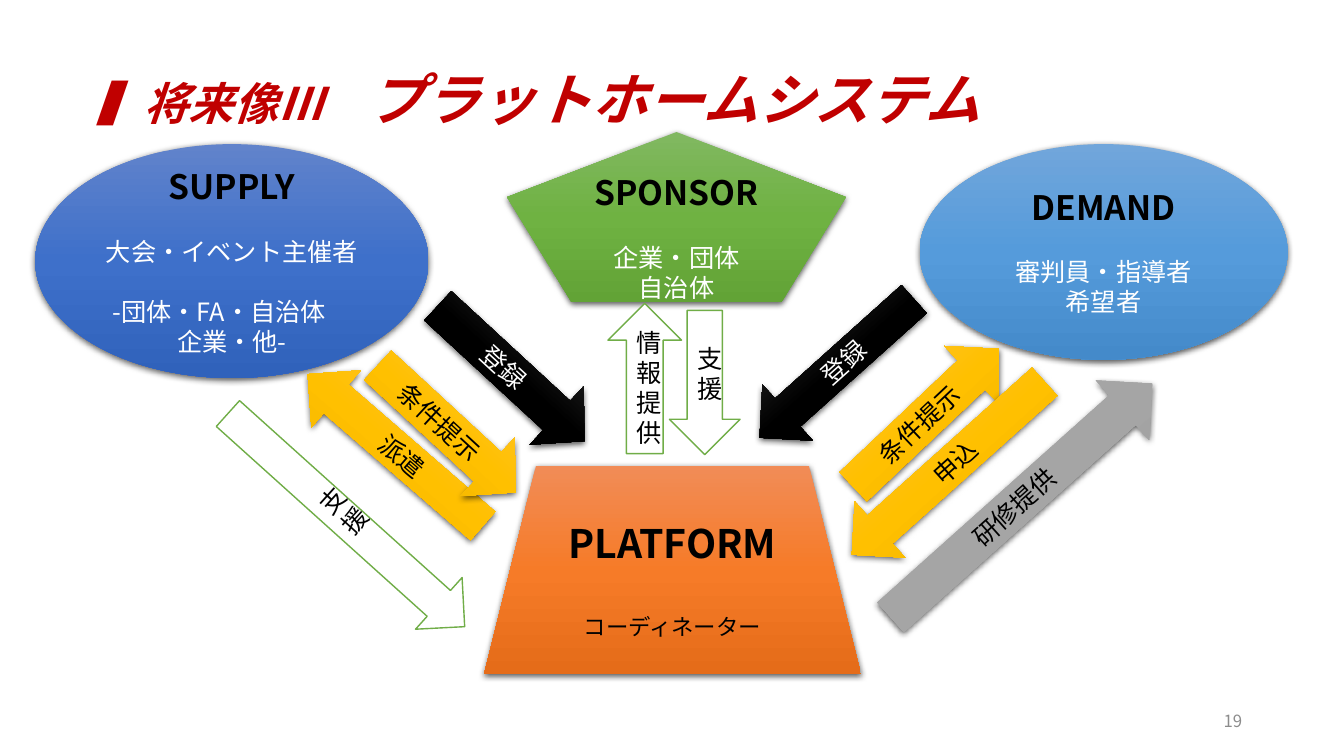
from copy import deepcopy

from lxml.etree import SubElement
from pptx import Presentation
from pptx.dml.color import RGBColor
from pptx.enum.shapes import MSO_SHAPE
from pptx.enum.text import MSO_ANCHOR, MSO_AUTO_SIZE, PP_ALIGN
from pptx.oxml.ns import qn
from pptx.util import Inches, Pt

FONT = "Noto Sans CJK JP"
LINE_HEIGHT = 1.19

COLORS = {
    "title": "C00000",
    "number": "8C8C8C",
    "black": "000000",
    "white": "FFFFFF",
    "outline": "70AD47",
}
GRADIENTS = {
    "orange": ("F18C57", "F67B28", "E56C19"),
    "blue": ("6183CB", "3E70CA", "3062BB"),
    "sky": ("71A6DB", "559BDB", "448ACA"),
    "green": ("81B861", "6FB242", "62A336"),
    "black": ("4B4B4B", "000000", "000000"),
    "gray": ("AFAFAF", "A5A5A5", "939393"),
    "gold": ("FFC64B", "FFC000", "E3AB00"),
}

# kind, box, gradient, heading, heading size, blank size, detail size, detail color, detail groups
ACTORS = [
    (MSO_SHAPE.TRAPEZOID, (4.8, 4.62, 3.74, 2.07), "orange",
     "PLATFORM", 28, 28, 16, "black", [["コーディネーター"]]),
    (MSO_SHAPE.OVAL, (0.35, 1.43, 3.9, 2.32), "blue",
     "SUPPLY", 24, 18, 18, "white",
     [["大会・イベント主催者"], ["-団体・FA・自治体　企業・他-"]]),
    (MSO_SHAPE.OVAL, (9.12, 1.43, 3.65, 2.14), "sky",
     "DEMAND", 24, 18, 18, "white", [["審判員・指導者", "希望者"]]),
    (MSO_SHAPE.REGULAR_PENTAGON, (5.03, 1.31, 3.36, 1.69), "green",
     "SPONSOR", 24, 18, 18, "white", [["企業・団体", "自治体"]]),
]

# kind, box, rotation, head length, gradient (None for outlined), label
ARROWS = [
    (MSO_SHAPE.RIGHT_ARROW, (4.08, 3.31, 1.98, 0.79), 42.7, 0.475, "black", "登録"),
    (MSO_SHAPE.RIGHT_ARROW, (8.39, 4.57, 3.48, 0.79), 318.2, 0.5, "gray", "研修提供"),
    (MSO_SHAPE.RIGHT_ARROW, (8.19, 3.75, 1.99, 0.79), 316.6, 0.475, "gold", "条件提示"),
    (MSO_SHAPE.LEFT_ARROW, (2.77, 4.09, 2.3, 0.75), 40.9, 0.5, "gold", "派遣"),
    (MSO_SHAPE.LEFT_ARROW, (7.27, 3.28, 2.06, 0.75), 318.1, 0.5, "black", "登録"),
    (MSO_SHAPE.RIGHT_ARROW, (3.5, 3.86, 1.86, 0.79), 42.7, 0.475, "gold", "条件提示"),
    (MSO_SHAPE.LEFT_ARROW, (8.12, 4.27, 2.57, 0.75), 318.1, 0.5, "gold", "申込"),
    (MSO_SHAPE.UP_ARROW, (6.03, 3.01, 0.73, 1.49), 0, 0.5, None, "情報提供"),
    (MSO_SHAPE.DOWN_ARROW, (6.64, 3.08, 0.7, 1.43), 0, 0.5, None, "支援"),
    (MSO_SHAPE.DOWN_ARROW, (3.09, 3.58, 0.69, 3.16), 312, 0.5, None, "支援"),
]


def rgb(name):
    return RGBColor.from_string(COLORS[name])


def set_attributes(target, values):
    for name, value in values.items():
        setattr(target, name, value)


def add_run(paragraph, text, size, color, bold=False, italic=False):
    run = paragraph.add_run()
    run.text = text
    set_attributes(run.font, {"size": Pt(size), "bold": bold, "italic": italic, "name": FONT})
    run.font.color.rgb = rgb(color)
    SubElement(run.font._element, qn("a:ea"), typeface=FONT)


def format_paragraph(paragraph, size, align=PP_ALIGN.CENTER, gap=0):
    set_attributes(paragraph, {
        "alignment": align,
        "line_spacing": Pt(size * LINE_HEIGHT),
        "space_before": Pt(gap),
    })


def fill_gradient(shape, gradient):
    """Fill from top to bottom with three evenly placed stops."""
    shape.fill.gradient()
    shape.fill.gradient_angle = 270
    stops = shape._element.spPr.find(".//" + qn("a:gsLst"))
    stops.append(deepcopy(stops[0]))
    for index, stop in enumerate(shape.fill.gradient_stops):
        stop.position = index / 2
        stop.color.rgb = RGBColor.from_string(GRADIENTS[gradient][index])


def add_soft_shadow(shape):
    effects = shape._element.spPr.find(qn("a:effectLst"))
    shadow = SubElement(effects, qn("a:outerShdw"), blurRad=str(Pt(4.5)),
                        dist=str(Pt(1.5)), dir="5400000", algn="ctr", rotWithShape="0")
    color = SubElement(shadow, qn("a:srgbClr"), val=COLORS["black"])
    SubElement(color, qn("a:alpha"), val="63000")


def add_block(slide, kind, box, gradient):
    """Add a shaded shape, or a white outlined one when gradient is None."""
    block = slide.shapes.add_shape(kind, *map(Inches, box))
    block.shadow.inherit = False
    if gradient:
        fill_gradient(block, gradient)
        block.line.fill.background()
        add_soft_shadow(block)
    else:
        block.fill.solid()
        block.fill.fore_color.rgb = rgb("white")
        block.line.color.rgb = rgb("outline")
        block.line.width = Pt(1)
    set_attributes(block.text_frame, {"word_wrap": True, "vertical_anchor": MSO_ANCHOR.MIDDLE})
    return block


def add_actor(slide, kind, box, gradient, heading, heading_size,
              blank_size, detail_size, detail_color, groups):
    frame = add_block(slide, kind, box, gradient).text_frame
    format_paragraph(frame.paragraphs[0], heading_size)
    add_run(frame.paragraphs[0], heading, heading_size, "black", bold=True)
    for group in groups:
        for index, detail in enumerate(group):
            paragraph = frame.add_paragraph()
            gap = 0 if index else blank_size * LINE_HEIGHT
            format_paragraph(paragraph, detail_size, gap=gap)
            add_run(paragraph, detail, detail_size, detail_color)


def add_arrow(slide, kind, box, rotation, head_length, gradient, label):
    arrow = add_block(slide, kind, box, gradient)
    arrow.rotation = rotation
    arrow.adjustments[1] = head_length
    paragraph = arrow.text_frame.paragraphs[0]
    format_paragraph(paragraph, 18)
    add_run(paragraph, label, 18, "white" if gradient == "black" else "black")


def add_title(slide):
    title = slide.shapes.title
    set_attributes(title, {"left": Inches(0.88), "top": Inches(0.6),
                           "width": Inches(9.07), "height": Inches(0.77)})
    set_attributes(title.text_frame, {
        "word_wrap": False,
        "auto_size": MSO_AUTO_SIZE.SHAPE_TO_FIT_TEXT,
        "vertical_anchor": MSO_ANCHOR.TOP,
    })
    paragraph = title.text_frame.paragraphs[0]
    format_paragraph(paragraph, 40, PP_ALIGN.LEFT)
    for text, size in (("▍将来像Ⅲ　", 32), ("プラットホームシステム", 40)):
        add_run(paragraph, text, size, "title", bold=True, italic=True)


def add_page_number(slide):
    number = slide.shapes.add_textbox(Inches(9.42), Inches(6.95), Inches(3), Inches(0.4))
    set_attributes(number.text_frame, {"word_wrap": True, "vertical_anchor": MSO_ANCHOR.MIDDLE})
    paragraph = number.text_frame.paragraphs[0]
    format_paragraph(paragraph, 12, PP_ALIGN.RIGHT)
    add_run(paragraph, "19", 12, "number")


def main():
    presentation = Presentation()
    presentation.slide_width = Inches(13.33)
    presentation.slide_height = Inches(7.5)
    slide = presentation.slides.add_slide(presentation.slide_layouts[5])
    add_title(slide)
    add_page_number(slide)
    for actor in ACTORS:
        add_actor(slide, *actor)
    for arrow in ARROWS:
        add_arrow(slide, *arrow)
    presentation.save("out.pptx")


if __name__ == "__main__":
    main()
